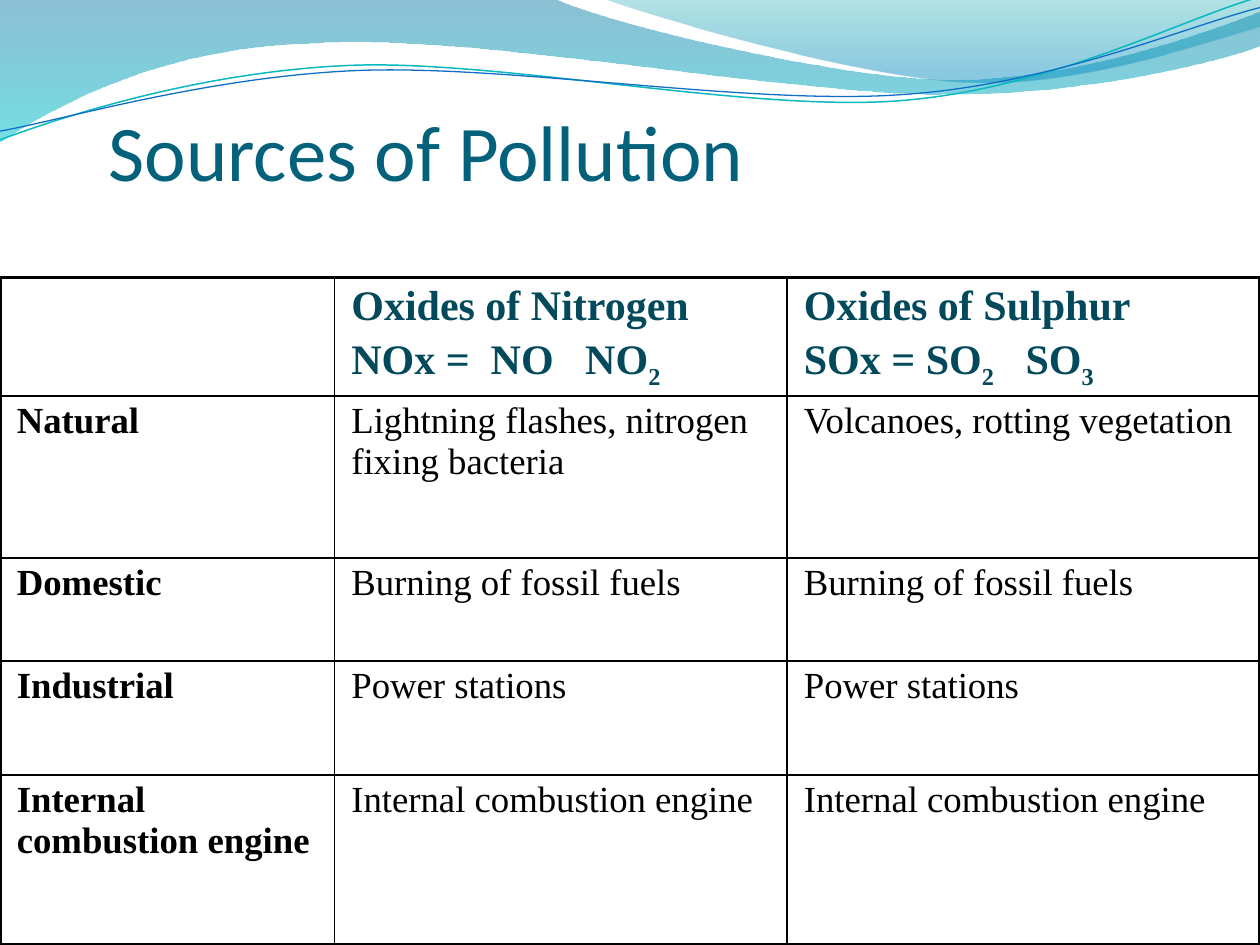
from math import cos, radians, sin

from lxml import etree
from pptx import Presentation
from pptx.dml.color import RGBColor
from pptx.enum.text import MSO_ANCHOR, MSO_AUTO_SIZE, PP_ALIGN
from pptx.oxml.ns import qn
from pptx.util import Pt

BOTTOM = MSO_ANCHOR.BOTTOM
TOP = MSO_ANCHOR.TOP
NO_AUTOFIT = MSO_AUTO_SIZE.NONE
LEFT = PP_ALIGN.LEFT

BLACK = RGBColor(0x00, 0x00, 0x00)
TITLE_TEAL = RGBColor(0x04, 0x61, 0x7B)
HEADER_TEAL = RGBColor(0x03, 0x49, 0x5C)
WAVE_BLUE = RGBColor(0x00, 0x74, 0xA1)
WAVE_CYAN = RGBColor(0x00, 0xC6, 0xCF)
CREST_TEAL = RGBColor(0x00, 0xA1, 0xA9)
CREST_BLUE = RGBColor(0x00, 0x8B, 0xBF)
RIPPLE_CYAN = RGBColor(0x0A, 0xB8, 0xBF)
RIPPLE_BLUE = RGBColor(0x0F, 0x6F, 0xC6)

THIN, THICK = 1, 2.25
RIPPLE_TILT = -2.7
RIPPLE_CENTER = (359.4, 42)

WAVES = [
    ([[(0, 0)], [(316.8, -0.7)],
      [(342.7, 12.2), (478.1, 45.4), (545.8, 45.4)],
      [(614.2, 45.4), (689.8, 18.7), (720, 6.5)],
      [(720.7, 25.9)],
      [(707.8, 31.7), (626.4, 54.7), (537.1, 54)],
      [(447.8, 54), (275, 20.2), (185, 24.5)],
      [(92.9, 25.9), (33.1, 59.8), (-0.7, 81.4)],
      [(0, 0)]],
     [(0, WAVE_BLUE, 45), (1, WAVE_CYAN, 55)]),
    ([[(344.9, -0.7)],
      [(366.5, 7.9), (491, 44.6), (553.7, 46.8)],
      [(616.3, 49.7), (691.9, 23), (720, 15.1)],
      [(720, 0)], [(344.9, -0.7)]],
     [(0, CREST_TEAL, 30), (0.8, CREST_BLUE, 45)]),
]
RIPPLES = [
    ([[(0, 79.9)],
      [(34.6, 67), (113.8, 41), (199.4, 37.4)],
      [(284.4, 33.8), (427, 64.1), (513.4, 57.6)],
      [(599.8, 51.1), (675.4, 10.8), (718.6, -1.4)]], RIPPLE_CYAN, 0.85),
    ([[(0, 74.9)],
      [(33.8, 69.1), (118.1, 43.9), (203.8, 40.3)],
      [(290.2, 36.7), (429.8, 60.5), (516.2, 54)],
      [(601.9, 48.2), (677.5, 15.1), (720, 4.3)]], RIPPLE_BLUE, 0.75),
]

COLUMN_WIDTHS = [191.2, 258.6, 270.2]
ROW_HEIGHTS = [67.6, 92.7, 58.9, 65.2, 96.8]
HEADINGS = [
    [],
    [["Oxides of Nitrogen"], ["NOx =  NO   NO", "2"]],
    [["Oxides of Sulphur"], ["SOx = SO", "2", "   SO", "3"]],
]
SOURCES = [
    ("Natural", "Lightning flashes, nitrogen fixing bacteria",
     "Volcanoes, rotting vegetation"),
    ("Domestic", "Burning of fossil fuels", "Burning of fossil fuels"),
    ("Industrial", "Power stations", "Power stations"),
    ("Internal combustion engine", "Internal combustion engine",
     "Internal combustion engine"),
]

TITLE_FONT = {"name": "Calibri", "size": Pt(45), "bold": False}
HEADER_FONT = {"name": "Times New Roman", "size": Pt(24), "bold": True}
LABEL_FONT = {"name": "Times New Roman", "size": Pt(21), "bold": True}
ENTRY_FONT = {**LABEL_FONT, "bold": False}
CELL_FORMAT = {"margin_left": Pt(9.6), "margin_right": Pt(9.6),
               "margin_top": Pt(2.9), "margin_bottom": Pt(2.9),
               "vertical_anchor": TOP}


def apply_format(target, values):
    for key, value in values.items():
        setattr(target, key, value)


def level(point):
    angle = radians(-RIPPLE_TILT)
    center_x, center_y = RIPPLE_CENTER
    x, y = point[0] - center_x, point[1] - center_y
    return (center_x + x * cos(angle) - y * sin(angle),
            center_y + x * sin(angle) + y * cos(angle))


def add_outline(slide, segments):
    start, *rest = [(Pt(x), Pt(y)) for segment in segments for x, y in segment]
    builder = slide.shapes.build_freeform(*start)
    builder.add_line_segments(rest, close=False)
    outline = builder.convert_to_shape()
    outline.shadow.inherit = False
    steps = iter(list(outline._element.iter(qn("a:lnTo"))))
    for segment in segments[1:]:
        first, *others = [next(steps) for _ in segment]
        if others:
            curve = etree.Element(qn("a:cubicBezTo"))
            first.addprevious(curve)
            for step in (first, *others):
                curve.append(step[0])
                step.getparent().remove(step)
    return outline


def add_wave(slide, segments, stops):
    wave = add_outline(slide, segments)
    etree.SubElement(next(wave._element.iter(qn("a:path"))), qn("a:close"))
    wave.line.fill.background()
    wave.fill.gradient()
    wave.fill.gradient_angle = 270
    for stop, (position, color, _) in zip(wave.fill.gradient_stops, stops):
        stop.position = position
        stop.color.rgb = color
    tints = wave._element.spPr.iter(qn("a:srgbClr"))
    for tint, (_, _, opacity) in zip(tints, stops):
        etree.SubElement(tint, qn("a:alpha"), val=str(opacity * 1000))


def add_ripple(slide, segments, color, width):
    ripple = add_outline(slide, [[level(point) for point in segment] for segment in segments])
    ripple.rotation = RIPPLE_TILT
    ripple.fill.background()
    ripple.line.color.rgb = color
    ripple.line.width = Pt(width)


def set_title(slide):
    title = slide.shapes.title
    apply_format(title, {"left": Pt(62), "top": Pt(50.7),
                         "width": Pt(637), "height": Pt(62)})
    frame = title.text_frame
    apply_format(frame, {"margin_left": 0, "margin_right": 0, "margin_top": Pt(3.6),
                         "margin_bottom": 0, "vertical_anchor": BOTTOM,
                         "word_wrap": True, "auto_size": NO_AUTOFIT})
    frame.text = "Sources of Pollution"
    paragraph = frame.paragraphs[0]
    paragraph.alignment = LEFT
    apply_format(paragraph.runs[0].font, TITLE_FONT)
    paragraph.runs[0].font.color.rgb = TITLE_TEAL


def set_borders(cell, widths):
    properties = cell._tc.get_or_add_tcPr()
    for index, (side, width) in enumerate(widths.items()):
        border = etree.Element(qn(f"a:ln{side}"), w=str(Pt(width)))
        fill = etree.SubElement(border, qn("a:solidFill"))
        etree.SubElement(fill, qn("a:srgbClr"), val=str(BLACK))
        properties.insert(index, border)


def fill_cell(cell, lines, font, color):
    apply_format(cell, CELL_FORMAT)
    cell.fill.background()
    frame = cell.text_frame
    for index, pieces in enumerate(lines):
        paragraph = frame.add_paragraph() if index else frame.paragraphs[0]
        paragraph.space_before = Pt(font["size"].pt * 0.2)
        for piece in pieces:
            run = paragraph.add_run()
            run.text = piece
            apply_format(run.font, font)
            run.font.color.rgb = color
            if piece.isdigit():
                run._r.get_or_add_rPr().set("baseline", "-25000")


def add_sources_table(slide):
    rows = [HEADINGS] + [[[[text]] for text in source] for source in SOURCES]
    last_row, last_column = len(rows) - 1, len(COLUMN_WIDTHS) - 1
    table = slide.shapes.add_table(
        len(rows), len(COLUMN_WIDTHS), 0, Pt(158.6),
        Pt(sum(COLUMN_WIDTHS)), Pt(sum(ROW_HEIGHTS))).table
    apply_format(table, {"first_row": False, "horz_banding": False})
    for column, width in zip(table.columns, COLUMN_WIDTHS):
        column.width = Pt(width)
    for r, (row, height) in enumerate(zip(table.rows, ROW_HEIGHTS)):
        row.height = Pt(height)
        for c, cell in enumerate(row.cells):
            if r == 0:
                font, color = HEADER_FONT, HEADER_TEAL
            else:
                font, color = (ENTRY_FONT if c else LABEL_FONT), BLACK
            fill_cell(cell, rows[r][c], font, color)
            set_borders(cell, {"L": THIN if c else THICK,
                               "R": THICK if c == last_column else THIN,
                               "T": THIN if r else THICK,
                               "B": THICK if r == last_row else THIN})


def main():
    presentation = Presentation()
    apply_format(presentation, {"slide_width": Pt(720), "slide_height": Pt(540)})
    slide = presentation.slides.add_slide(presentation.slide_layouts[5])
    for segments, stops in WAVES:
        add_wave(slide, segments, stops)
    for segments, color, width in RIPPLES:
        add_ripple(slide, segments, color, width)
    add_sources_table(slide)
    set_title(slide)
    presentation.save("out.pptx")


if __name__ == "__main__":
    main()
